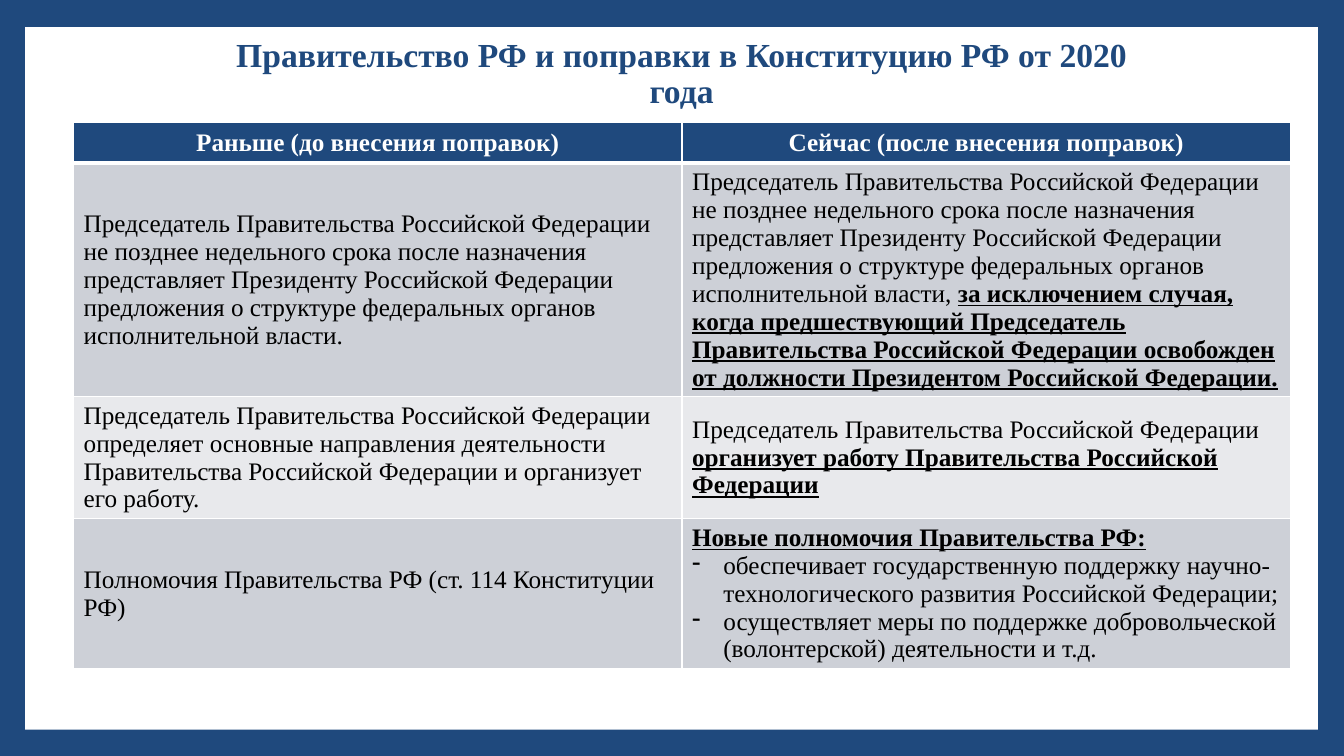
import pptx
import pptx.util
import pptx.dml.color
import pptx.enum.shapes
import pptx.enum.text
import pptx.oxml
import pptx.oxml.ns

TITLE = "Правительство РФ и поправки в Конституцию РФ от 2020 года"
HEADS = ["Раньше (до внесения поправок)", "Сейчас (после внесения поправок)"]
CHAIR = "Председатель Правительства Российской Федерации "
DUTY = (CHAIR + "не позднее недельного срока после назначения представляет "
        "Президенту Российской Федерации предложения о структуре "
        "федеральных органов исполнительной власти")
ROWS = [
    [[("plain", DUTY + ".")],
     [("plain", DUTY + ",\u00a0"),
      ("new", "за исключением случая, когда предшествующий Председатель "
              "Правительства Российской Федерации освобожден от должности "
              "Президентом Российской Федерации.")]],
    [[("plain", CHAIR + "определяет основные направления деятельности "
                "Правительства Российской Федерации и организует его работу.")],
     [("plain", CHAIR),
      ("new", "организует работу Правительства Российской Федерации")]],
    [[("plain", "Полномочия Правительства РФ (ст. 114 Конституции РФ)")],
     [("new", "Новые полномочия Правительства РФ:"),
      ("item", "обеспечивает государственную поддержку "
               "научно-технологического развития Российской Федерации;"),
      ("item", "осуществляет меры по поддержке добровольческой "
               "(волонтерской) деятельности и т.д.")]],
]
HIGH = [0.41, 2.3, 1.21, 1.49]
INK = {"navy": "1F497D", "white": "FFFFFF", "black": "000000",
       "dark": "CDD0D7", "light": "E8E9EC"}
FONT = "Times New Roman"
WIDE, TALL = 13.33, 7.5

Inch = pptx.util.Inches
Align = pptx.enum.text.PP_ALIGN
Anchor = pptx.enum.text.MSO_ANCHOR


def tint(name):
    return pptx.dml.color.RGBColor.from_string(INK[name])


def paint(obj, name):
    obj.fill.solid()
    obj.fill.fore_color.rgb = tint(name)


def style(run, size, ink, bold=False, under=False):
    font = run.font
    font.name, font.size = FONT, pptx.util.Pt(size)
    font.bold, font.underline = bold, under
    font.color.rgb = tint(ink)


def place(obj, left, top, wide, tall):
    obj.left, obj.top = Inch(left), Inch(top)
    obj.width, obj.height = Inch(wide), Inch(tall)


def edge(cell, row):
    props = cell._tc.get_or_add_tcPr()
    for side in "LRTB":
        thick = (row, side) in [(0, "B"), (1, "T")]
        props.append(pptx.oxml.parse_xml(
            f'<a:ln{side} {pptx.oxml.ns.nsdecls("a")} w="{38100 if thick else 12700}">'
            f'<a:solidFill><a:srgbClr val="{INK["white"]}"/></a:solidFill></a:ln{side}>'))


def dash(para):
    props = para._p.get_or_add_pPr()
    props.set("marL", str(Inch(0.31)))
    props.set("indent", str(-Inch(0.31)))
    props.append(pptx.oxml.parse_xml(
        f'<a:buChar {pptx.oxml.ns.nsdecls("a")} char="-"/>'))


def write(cell, parts):
    para = cell.text_frame.paragraphs[0]
    for kind, text in parts:
        if kind == "item":
            para = cell.text_frame.add_paragraph()
            dash(para)
        run = para.add_run()
        run.text = text
        style(run, 18, "black", kind == "new", kind == "new")


def main():
    deck = pptx.Presentation()
    deck.slide_width, deck.slide_height = Inch(WIDE), Inch(TALL)
    slide = deck.slides.add_slide(deck.slide_layouts[5])
    paint(slide.background, "navy")

    panel = slide.shapes.add_shape(
        pptx.enum.shapes.MSO_SHAPE.RECTANGLE,
        Inch(0.25), Inch(0.27), Inch(WIDE - 0.51), Inch(TALL - 0.53))
    panel.shadow.inherit = False
    paint(panel, "white")
    panel.line.fill.background()
    slide.shapes._spTree.insert(2, panel._element)

    title = slide.shapes.title
    place(title, 2.06, 0.27, 9.4, 0.94)
    frame = title.text_frame
    frame.text = TITLE
    frame.word_wrap = True
    frame.vertical_anchor = Anchor.MIDDLE
    para = frame.paragraphs[0]
    para.alignment, para.line_spacing = Align.CENTER, 0.9
    style(para.runs[0], 24, "navy", True)

    table = slide.shapes.add_table(
        len(HIGH), len(HEADS), Inch(0.73), Inch(1.21),
        Inch(12.07), Inch(sum(HIGH))).table
    for row, tall in enumerate(HIGH):
        table.rows[row].height = Inch(tall)
        for col, head in enumerate(HEADS):
            cell = table.cell(row, col)
            cell.vertical_anchor = Anchor.MIDDLE
            edge(cell, row)
            if row == 0:
                paint(cell, "navy")
                cell.text_frame.text = head
                para = cell.text_frame.paragraphs[0]
                para.alignment = Align.CENTER
                style(para.runs[0], 18, "white", True)
            else:
                paint(cell, "dark" if row % 2 else "light")
                write(cell, ROWS[row - 1][col])

    deck.save("out.pptx")


if __name__ == "__main__":
    main()
